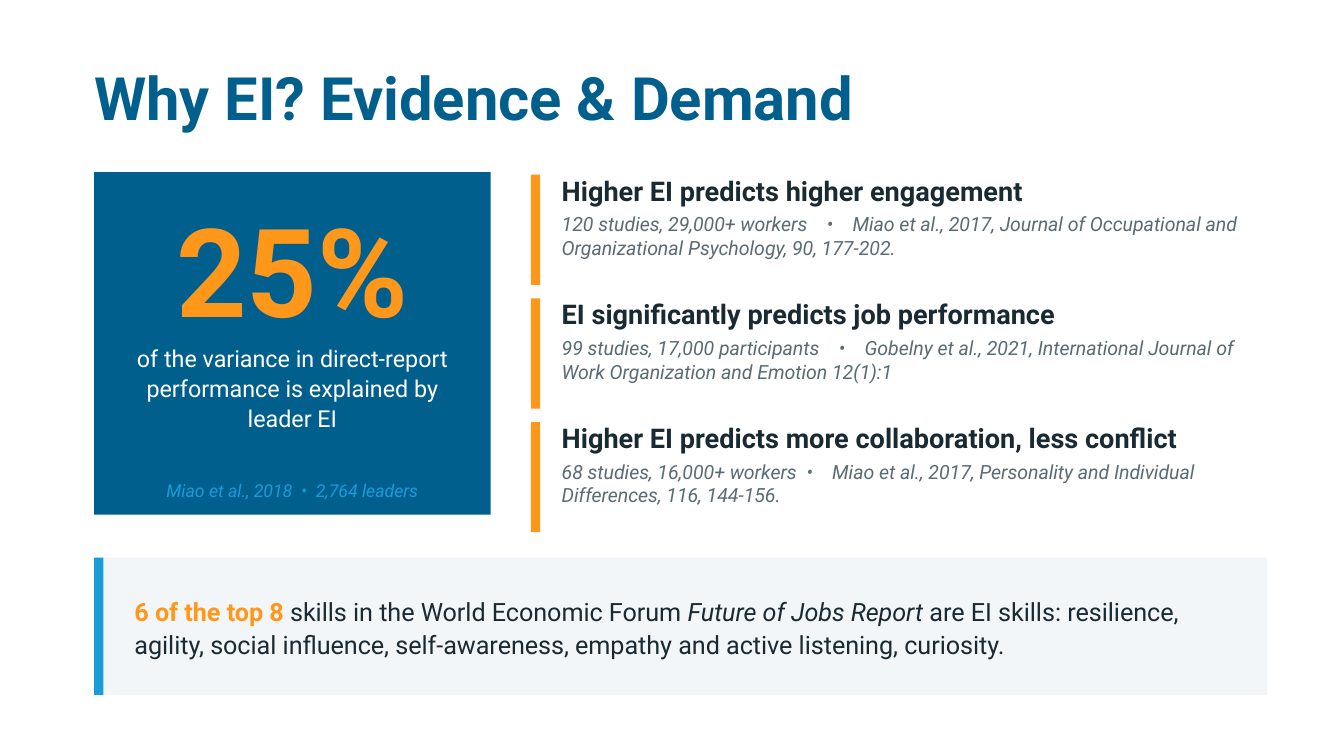
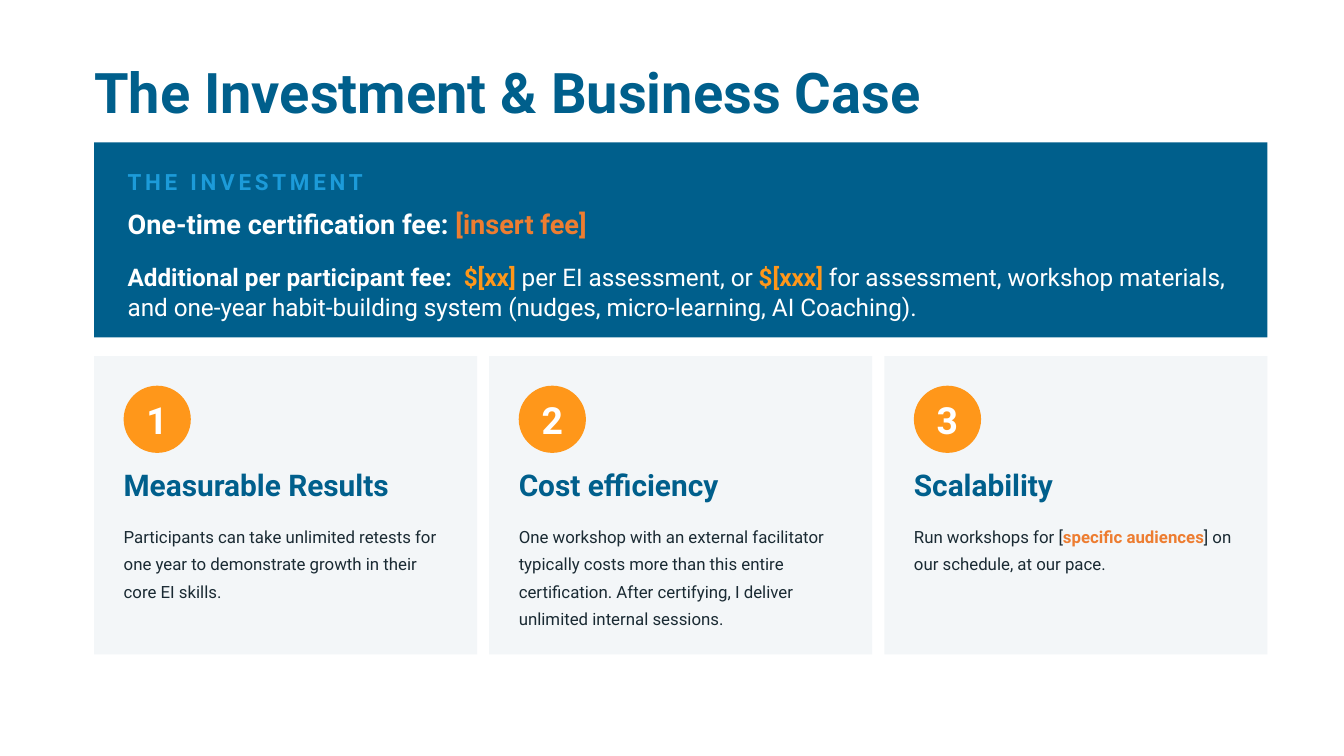
from pptx import Presentation
from pptx import util as u
from pptx.dml import color
from pptx.enum import shapes, text

FONT = "Roboto"
BLUE, SKY, ORANGE, RUST = "005F8C", "1C9BD9", "FF971A", "ED7D31"
INK, GREY, PALE, WHITE = "1A2A33", "5A6B73", "F3F6F8", "FFFFFF"
LEFT, CONTENT_WIDTH, STRIPE = 50.4, 628.56, 5.04
CENTER = text.PP_ALIGN.CENTER
MIDDLE = text.MSO_ANCHOR.MIDDLE
RECTANGLE, OVAL = shapes.MSO_SHAPE.RECTANGLE, shapes.MSO_SHAPE.OVAL

FINDINGS = [
    ("Higher EI predicts higher engagement", "120 studies, 29,000+ workers", 7.8,
     "Miao et al., 2017, Journal of Occupational and Organizational Psychology, 90, 177-202."),
    ("EI significantly predicts job performance", "99 studies, 17,000 participants", 7.8,
     "Gobelny et al., 2021, International Journal of Work Organization and Emotion 12(1):1"),
    ("Higher EI predicts more collaboration, less conflict", "68 studies, 16,000+ workers", 2.6,
     "Miao et al., 2017, Personality and Individual Differences, 116, 144-156."),
]

BENEFITS = [
    ("Measurable Results",
     ["Participants can take unlimited retests for one year to demonstrate growth "
      "in their core EI skills."]),
    ("Cost efficiency",
     ["One workshop with an external facilitator typically costs more than this entire "
      "certification. After certifying, I deliver unlimited internal sessions."]),
    ("Scalability",
     ["Run workshops for [", ("specific audiences", {"fill": RUST, "bold": True}),
      "] on our schedule, at our pace."]),
]


def rgb(value):
    return color.RGBColor.from_string(value)


def style_span(span, size, fill, bold=False, italic=False, tracking=None):
    font = span.font
    font.name, font.size = FONT, u.Pt(size)
    font.bold, font.italic = bold, italic
    font.color.rgb = rgb(fill)
    if tracking:
        span._r.get_or_add_rPr().set("spc", str(round(tracking * 100)))


def write(box, spans, align=text.PP_ALIGN.LEFT, anchor=text.MSO_ANCHOR.TOP, line=None, **style):
    frame = box.text_frame
    frame.word_wrap = True
    frame.auto_size = text.MSO_AUTO_SIZE.NONE
    frame.vertical_anchor = anchor
    frame.margin_left = frame.margin_top = frame.margin_right = frame.margin_bottom = 0
    para = frame.paragraphs[0]
    para.alignment = align
    if line:
        para.line_spacing = u.Pt(line)
    for item in spans:
        words, changes = (item, {}) if isinstance(item, str) else item
        span = para.add_run()
        span.text = words
        style_span(span, **{**style, **changes})


def add_label(page, area, spans, **style):
    box = page.shapes.add_textbox(*map(u.Pt, area))
    write(box, spans, **style)


def add_panel(page, area, fill, kind=RECTANGLE):
    panel = page.shapes.add_shape(kind, *map(u.Pt, area))
    panel.shadow.inherit = False
    panel.fill.solid()
    panel.fill.fore_color.rgb = rgb(fill)
    panel.line.fill.background()
    return panel


def add_page(deck, title, top, height, size):
    page = deck.slides.add_slide(deck.slide_layouts[5])
    box = page.shapes.title
    box.left, box.top = u.Pt(LEFT), u.Pt(top)
    box.width, box.height = u.Pt(CONTENT_WIDTH), u.Pt(height)
    write(box, [title], anchor=MIDDLE, size=size, fill=BLUE, bold=True)
    return page


def dotted(before, gap_before, gap_after, after):
    return [before, (" ", {"tracking": gap_before}), ("•", {"tracking": gap_after}), " " + after]


def add_statistic(page):
    add_panel(page, (LEFT, 92.16, 212.4, 183.6), BLUE)
    add_label(page, (LEFT, 108, 212.4, 72), ["25%"], align=CENTER, anchor=MIDDLE,
              size=66, fill=ORANGE, bold=True)
    add_label(page, (64.8, 183.6, 183.6, 72),
              ["of the variance in direct-report performance is explained by leader EI"],
              align=CENTER, line=16, size=12.5, fill=WHITE)
    add_label(page, (64.8, 252, 183.6, 21.6),
              dotted("Miao et al., 2018", 2.35, 2.35, "2,764 leaders"),
              align=CENTER, anchor=MIDDLE, size=9.5, fill=SKY, italic=True)


def add_finding(page, top, heading, sample, gap, citation):
    add_panel(page, (284.4, top, STRIPE, 59.04), ORANGE)
    add_label(page, (300.96, top, 381.6, 20.16), [heading], line=17,
              size=14.5, fill=INK, bold=True)
    add_label(page, (300.96, top + 20.16, 381.6, 25.92), dotted(sample, gap, 7.8, citation),
              size=10.5, fill=GREY, italic=True)


def add_callout(page):
    top, height = 298.8, 73.44
    add_panel(page, (LEFT, top, CONTENT_WIDTH, height), PALE)
    add_panel(page, (LEFT, top, STRIPE, height), SKY)
    add_label(page, (72, top, 594, height), [
        ("6 of the top 8", {"fill": ORANGE, "bold": True}),
        " skills in the World Economic Forum ",
        ("Future of Jobs Report", {"italic": True}),
        " are EI skills: resilience, agility, social influence, self-awareness, "
        "empathy and active listening, curiosity.",
    ], anchor=MIDDLE, line=18, size=13.5, fill=INK)


def add_benefit(page, number, heading, body):
    left, top, pad = LEFT + (number - 1) * 211.68, 190.8, 15.84
    inner, width = left + pad, 173.52
    add_panel(page, (left, top, 205.2, 159.84), PALE)
    badge = add_panel(page, (inner, top + pad, 36, 36), ORANGE, OVAL)
    write(badge, [str(number)], align=CENTER, anchor=MIDDLE, size=20, fill=WHITE, bold=True)
    add_label(page, (inner, top + 59.04, width, 28.8), [heading], size=16, fill=BLUE, bold=True)
    add_label(page, (inner, top + 87.84, width, 60), body, line=14.5, size=9, fill=INK)


def add_investment(page):
    left, width = 68.4, 590.4
    amount = {"fill": ORANGE, "bold": True}
    add_panel(page, (LEFT, 76.32, CONTENT_WIDTH, 104.4), BLUE)
    add_label(page, (left, 86.4, width, 21.6), ["THE INVESTMENT"], anchor=MIDDLE,
              size=12, fill=SKY, bold=True, tracking=2)
    add_label(page, (left, 110.88, width, 25.2),
              ["One-time certification fee: ", ("[insert fee]", {"fill": RUST})],
              size=14.5, fill=WHITE, bold=True)
    add_label(page, (left, 140.4, width, 36), [
        ("Additional per participant fee:", {"bold": True}),
        (" ", {"bold": True, "tracking": 3.2}),
        ("$[xx]", amount),
        " per EI assessment, or ",
        ("$[xxx]", amount),
        " for assessment, workshop materials, and one-year habit-building system "
        "(nudges, micro-learning, AI Coaching).",
    ], line=16, size=13, fill=WHITE)


def main():
    deck = Presentation()
    deck.slide_width, deck.slide_height = u.Pt(720), u.Pt(405)

    evidence = add_page(deck, "Why EI? Evidence & Demand", 30.24, 43.2, 32)
    add_statistic(evidence)
    for index, finding in enumerate(FINDINGS):
        add_finding(evidence, 93.6 + index * 66.24, *finding)
    add_callout(evidence)

    business = add_page(deck, "The Investment & Business Case", 28.8, 39.6, 30)
    for number, benefit in enumerate(BENEFITS, 1):
        add_benefit(business, number, *benefit)
    add_investment(business)

    deck.save("out.pptx")


if __name__ == "__main__":
    main()
